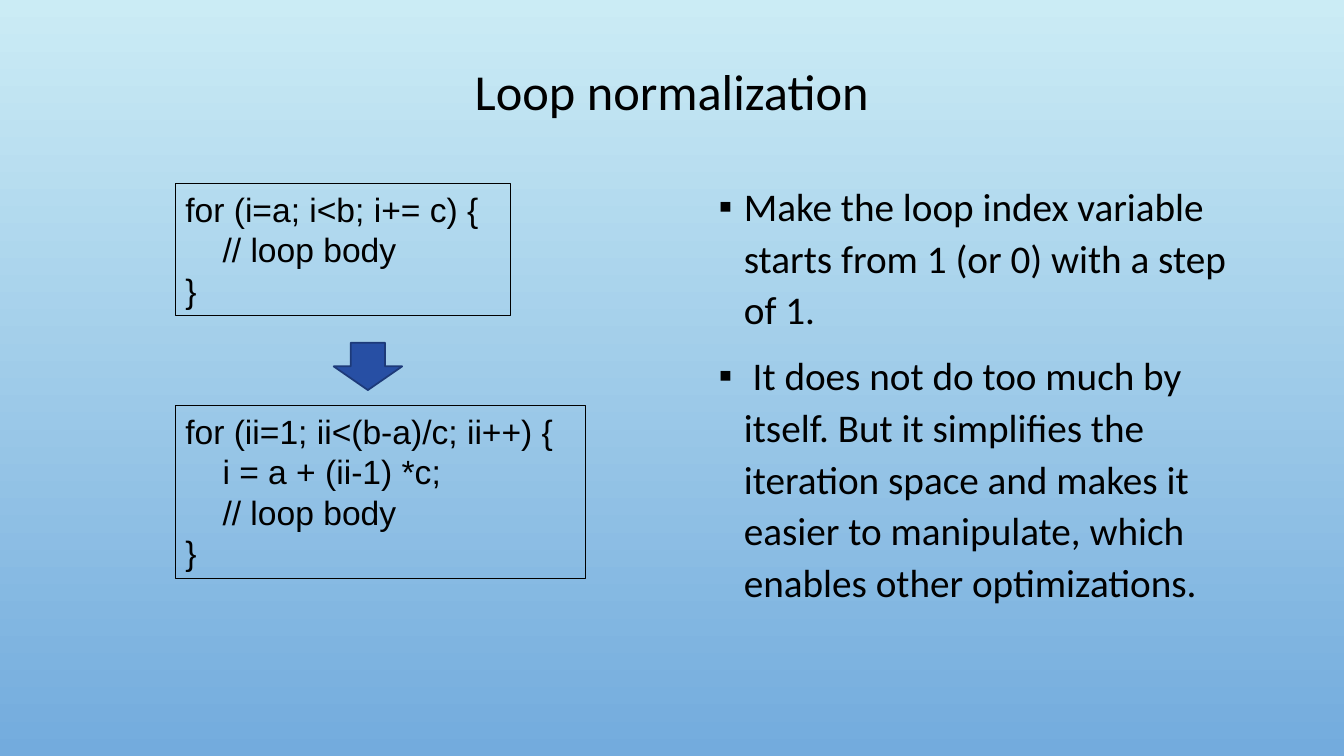
from lxml.etree import SubElement
from pptx import Presentation
from pptx.dml.color import RGBColor
from pptx.enum.shapes import MSO_SHAPE as Preset
from pptx.enum.text import MSO_ANCHOR as Anchor, MSO_AUTO_SIZE as AutoSize, PP_ALIGN as Align
from pptx.oxml.ns import qn
from pptx.util import Emu, Pt

PX = 9144  # 100 px to the inch
BLACK = "000000"


def paint(color, hex_value):
    color.rgb = RGBColor.from_string(hex_value)


def write(paragraph, text, size, font, **formats):
    for key, value in formats.items():
        setattr(paragraph, key, value)
    run = paragraph.add_run()
    run.text = text
    for key, value in {"name": font, "size": Pt(size)}.items():
        setattr(run.font, key, value)
    paint(run.font.color, BLACK)


deck = Presentation()
deck.slide_width, deck.slide_height = Emu(12192000), Emu(6858000)
slide = deck.slides.add_slide(deck.slide_layouts[1])

# Background gradient, light at the top
backdrop = slide.background.fill
backdrop.gradient()
backdrop.gradient_angle = 270
for stop, shade in zip(backdrop.gradient_stops, ("CBECF5", "73ABDD")):
    paint(stop.color, shade)

# Title and explanation placeholders
heading, explanation = slide.placeholders
for holder, box, anchor in (
    (heading, (100, 32, 1133, 123), Anchor.MIDDLE),
    (explanation, (703, 171, 530, 462), Anchor.TOP),
):
    holder.left, holder.top, holder.width, holder.height = (Emu(v * PX) for v in box)
    for key, value in {"vertical_anchor": anchor, "word_wrap": True,
                       "auto_size": AutoSize.NONE}.items():
        setattr(holder.text_frame, key, value)

write(heading.text_frame.paragraphs[0], "Loop normalization", 36, "Calibri",
      alignment=Align.CENTER, line_spacing=0.9)

points = [
    "Make the loop index variable starts from 1 (or 0) with a step of 1.",
    " It does not do too much by itself. But it simplifies the iteration space "
    "and makes it easier to manipulate, which enables other optimizations.",
]
for index, point in enumerate(points):
    frame = explanation.text_frame
    paragraph = frame.add_paragraph() if index else frame.paragraphs[0]
    props = paragraph._p.get_or_add_pPr()
    props.set("marL", str(25 * PX))
    props.set("indent", str(-25 * PX))
    bullet_color = SubElement(props, qn("a:buClr"))
    SubElement(bullet_color, qn("a:srgbClr"), val=BLACK)
    SubElement(props, qn("a:buFont"), typeface="Arial")
    SubElement(props, qn("a:buChar"), char="▪")
    write(paragraph, point, 28, "Calibri", line_spacing=1.1,
          space_before=Pt(10 if index else 0))

# Arrow from the first loop to its normalized form
arrow = slide.shapes.add_shape(Preset.DOWN_ARROW, *(Emu(v * PX) for v in (331, 340, 68, 47)))
arrow.shadow.inherit = False
arrow.fill.solid()
paint(arrow.fill.fore_color, "274FA4")
paint(arrow.line.color, "1D3A79")
arrow.line.width = Pt(1.25)

# Loop before and after
loops = [
    ((174, 182, 332, 131), ["for (i=a; i<b; i+= c) {", "    // loop body", "}"]),
    ((174, 402, 407, 172), ["for (ii=1; ii<(b-a)/c; ii++) {", "    i = a + (ii-1) *c;",
                            "    // loop body", "}"]),
]
for box, code in loops:
    listing = slide.shapes.add_textbox(*(Emu(v * PX) for v in box))
    paint(listing.line.color, BLACK)
    listing.line.width = Pt(0.75)
    frame = listing.text_frame
    frame.word_wrap = True
    for index, code_line in enumerate(code):
        paragraph = frame.add_paragraph() if index else frame.paragraphs[0]
        write(paragraph, code_line, 24, "Arial", line_spacing=Pt(29))

deck.save("out.pptx")
